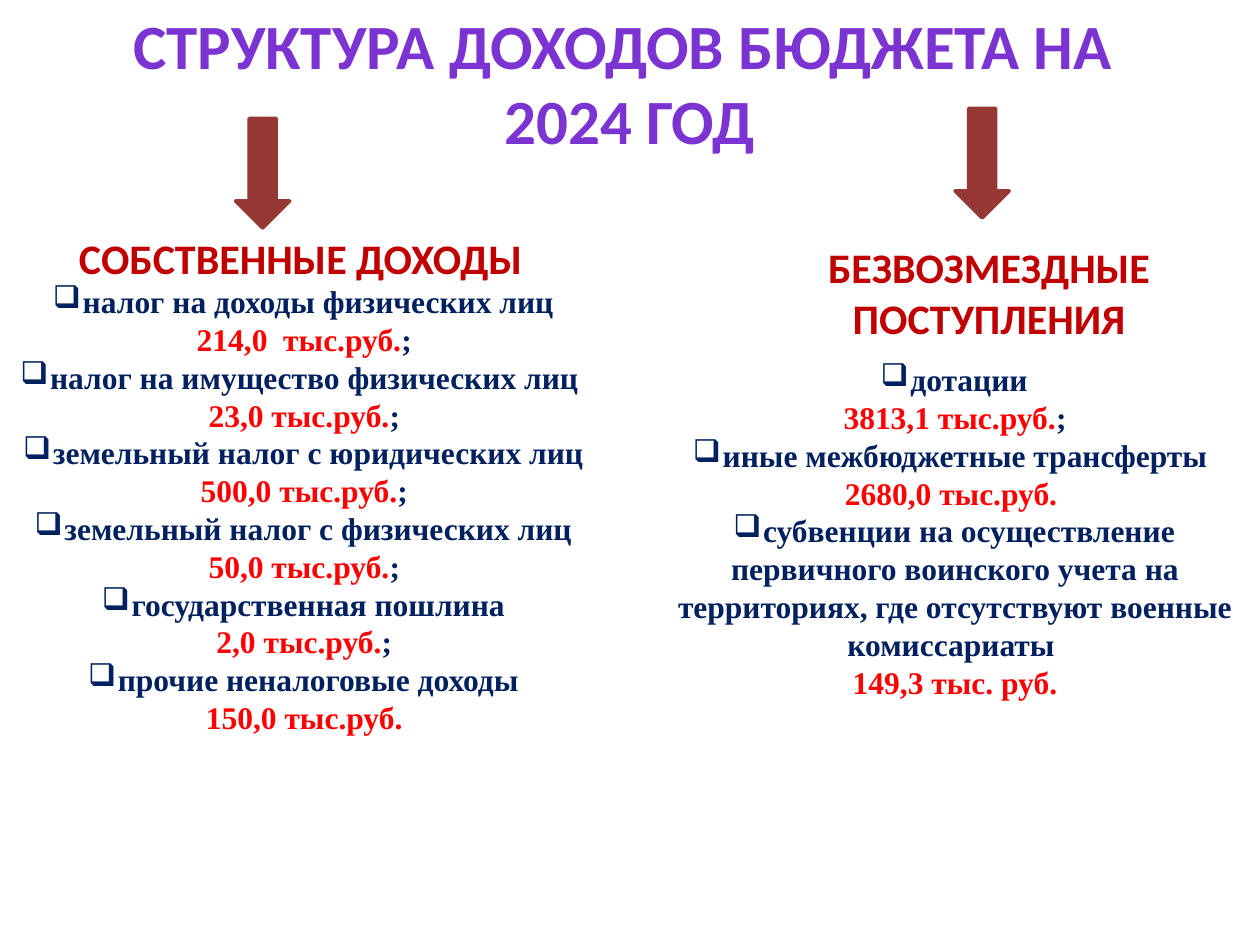
from lxml import etree
from pptx import Presentation
from pptx.dml.color import RGBColor
from pptx.enum.shapes import MSO_SHAPE as Shape
from pptx.enum.text import PP_ALIGN as Align
from pptx.oxml.ns import qn
from pptx.util import Inches, Pt

TITLE = ["СТРУКТУРА ДОХОДОВ БЮДЖЕТА НА ", "2024 ГОД"]
HEADS = [
    ("СОБСТВЕННЫЕ ДОХОДЫ", (0.08, 1.8, 4.61, 0.5)),
    ("БЕЗВОЗМЕЗДНЫЕ ПОСТУПЛЕНИЯ", (5.86, 1.87, 3.98, 0.91)),
]
OWN = [
    ("налог на доходы физических лиц", "214,0  тыс.руб.", ";"),
    ("налог на имущество физических лиц ", "23,0 тыс.руб.", ";"),
    ("земельный налог с юридических лиц", "500,0 тыс.руб.", ";"),
    ("земельный налог с физических лиц", "50,0 тыс.руб.", ";"),
    ("государственная пошлина", "2,0 тыс.руб.", ";"),
    ("прочие неналоговые доходы", "150,0 тыс.руб.", ""),
]
GRANTS = [
    ("дотации", "3813,1 тыс.руб.", ";"),
    ("иные межбюджетные трансферты ", "2680,0 тыс.руб. ", ""),
    ("субвенции на осуществление первичного воинского учета на территориях, "
     "где отсутствуют военные комиссариаты ", "149,3 тыс. руб.", ""),
]
LISTS = [(OWN, (0, 2.19, 4.83, 4.04)), (GRANTS, (5.16, 2.81, 4.84, 3.13))]
ARROWS = [(1.87, 0.94), (7.58, 0.86)]
PURPLE, CRIMSON, NAVY, RED, BROWN = "7B34D2", "C00000", "002060", "FF0000", "953735"


def color(code):
    """Turn a hex string into a colour."""
    return RGBColor.from_string(code)


def add_text(slide, box, lines, size, face, lead=None):
    """Add centred bold lines, each a list of (text, colour) and a bullet flag."""
    frame = slide.shapes.add_textbox(*map(Inches, box)).text_frame
    frame.word_wrap = True
    for num, (parts, mark) in enumerate(lines):
        para = frame.add_paragraph() if num else frame.paragraphs[0]
        para.alignment = Align.CENTER
        if lead:
            para.line_spacing = Pt(lead)
        if mark:
            props = para._p.get_or_add_pPr()
            etree.SubElement(props, qn("a:buChar")).set("char", "❑")
        for text, code in parts:
            run = para.add_run()
            run.text = text
            font = run.font
            font.name, font.size, font.bold = face, Pt(size), True
            font.color.rgb = color(code)


def add_arrow(slide, left, top):
    """Add one downward block arrow."""
    arrow = slide.shapes.add_shape(
        Shape.DOWN_ARROW, Inches(left), Inches(top), Inches(0.43), Inches(0.87))
    arrow.shadow.inherit = False
    arrow.fill.solid()
    arrow.fill.fore_color.rgb = color(BROWN)
    arrow.line.color.rgb = color(BROWN)
    arrow.line.width = Pt(2)


def item_lines(items):
    """Give a bulleted name line and a sum line for each item."""
    for name, total, end in items:
        yield [(name, NAVY)], True
        yield [(total, RED)] + ([(end, NAVY)] if end else []), False


def main():
    """Build the slide and save it."""
    deck = Presentation()
    deck.slide_width, deck.slide_height = Inches(10), Inches(7.5)
    slide = deck.slides.add_slide(deck.slide_layouts[6])
    add_text(slide, (0, 0, 10, 1.31),
             [([(text, PURPLE)], False) for text in TITLE], 36, "Calibri")
    for left, top in ARROWS:
        add_arrow(slide, left, top)
    for text, box in HEADS:
        add_text(slide, box, [([(text, CRIMSON)], False)], 24, "Calibri")
    for items, box in LISTS:
        add_text(slide, box, item_lines(items), 18, "Times New Roman", 21.6)
    deck.save("out.pptx")


if __name__ == "__main__":
    main()
